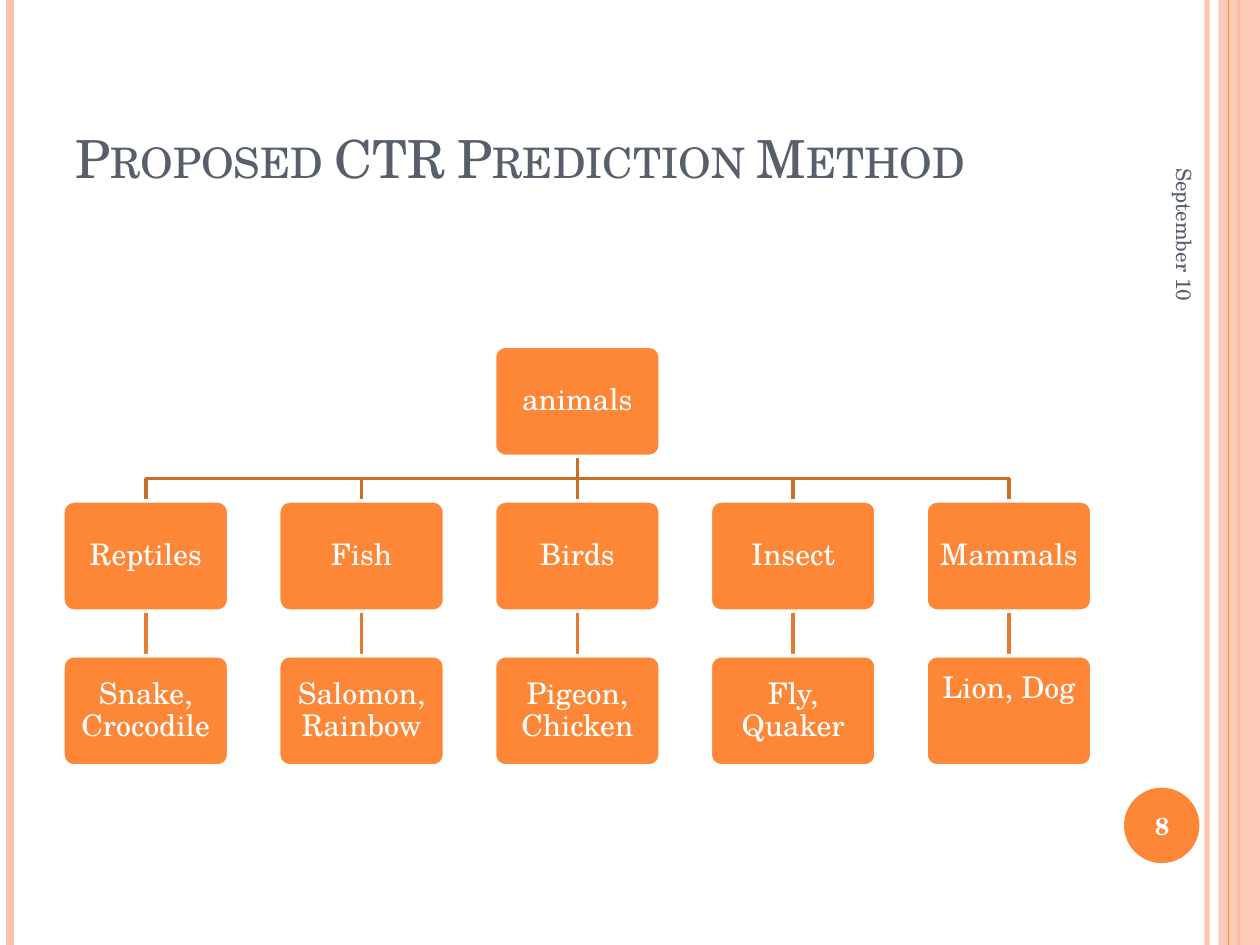
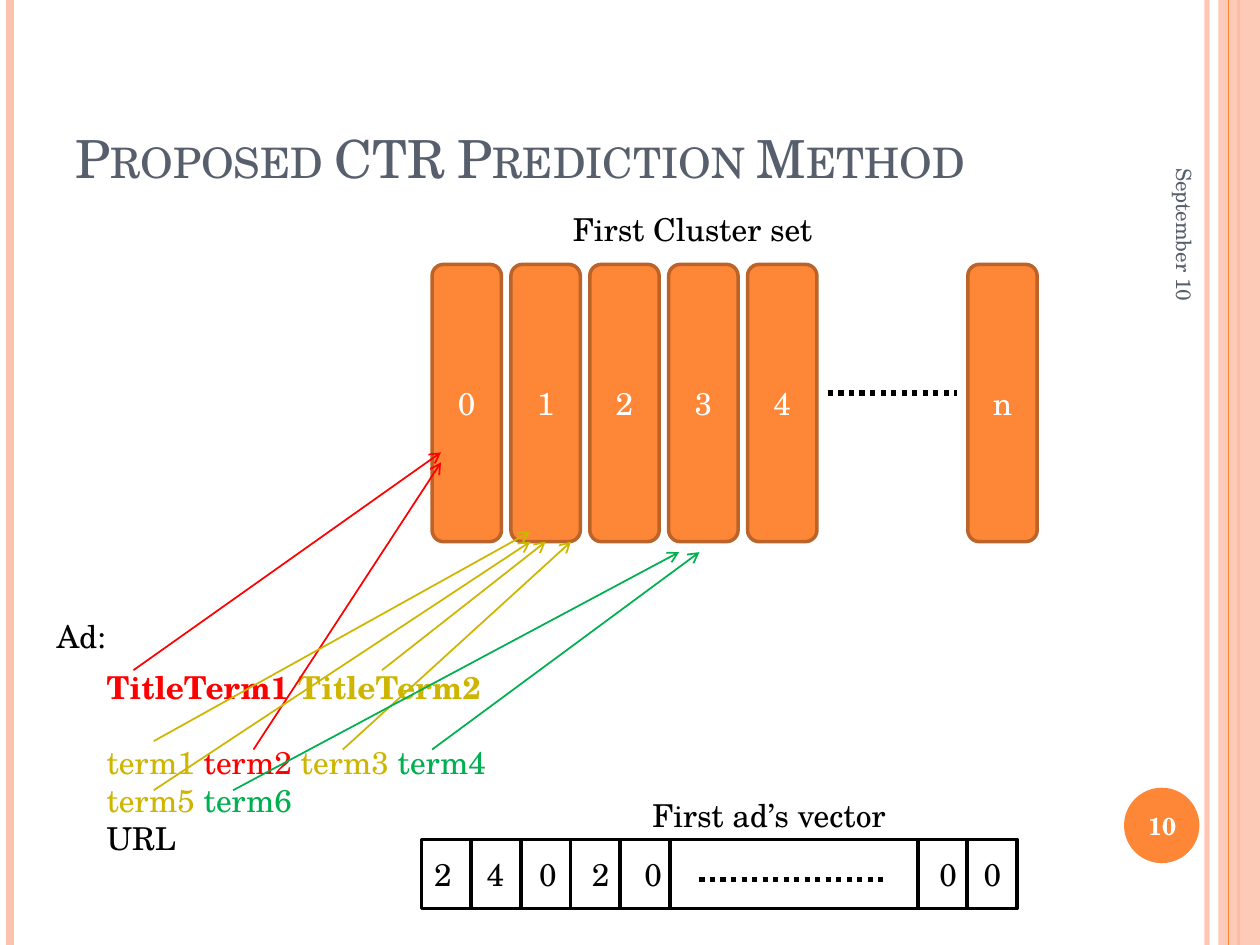
from dataclasses import dataclass

from lxml import etree
from pptx import Presentation
from pptx import util as u
from pptx.dml import color
from pptx.enum import shapes, text
from pptx.oxml import ns

Cm, Pt = u.Cm, u.Pt
Kind, Align, Anchor = shapes.MSO_SHAPE, text.PP_ALIGN, text.MSO_ANCHOR


@dataclass(frozen=True)
class Theme:
    font: str = "TeX Gyre Schola"
    orange: str = "FE8637"
    edge: str = "BC6329"
    branch: str = "CB6B2C"
    twig: str = "E77A32"
    peach: str = "FEC3AE"
    slate: str = "575F6D"
    white: str = "FFFFFF"
    black: str = "000000"
    red: str = "FF0000"
    gold: str = "CEB500"
    green: str = "00B050"
    title: int = 30
    body: int = 18
    node: int = 17
    page: int = 14
    date: int = 12


T = Theme()
WIDE, HIGH = 25.4, 19.05


def rgb(code):
    return color.RGBColor.from_string(code)


def fade(shape, pct):
    """Make the shape's own colour partly transparent."""
    tint = next(shape.element.spPr.iter(ns.qn("a:srgbClr")))
    etree.SubElement(tint, ns.qn("a:alpha"), val=str(pct * 1000))


def rule(slide, start, end, tint, width, dash=None, tail=None):
    """Draw a straight line, dotted or with an arrowhead if asked."""
    line = slide.shapes.add_connector(
        shapes.MSO_CONNECTOR.STRAIGHT, *map(Cm, (*start, *end)))
    line.line.color.rgb = rgb(tint)
    line.line.width = Pt(width)
    props = line.element.spPr
    stroke = props.find(ns.qn("a:ln"))
    if dash:
        etree.SubElement(stroke, ns.qn("a:prstDash"), val=dash)
    if tail:
        etree.SubElement(stroke, ns.qn("a:tailEnd"), type=tail)
    etree.SubElement(props, ns.qn("a:effectLst"))
    return line


def block(slide, kind, box, fill=None, edge=None, width=2):
    shape = slide.shapes.add_shape(kind, *map(Cm, box))
    shape.shadow.inherit = False
    if fill:
        shape.fill.solid()
        shape.fill.fore_color.rgb = rgb(fill)
    else:
        shape.fill.background()
    if edge:
        shape.line.color.rgb = rgb(edge)
        shape.line.width = Pt(width)
    else:
        shape.line.fill.background()
    return shape


def add_run(para, words, size, tint, bold=False):
    run = para.add_run()
    run.text = words
    font = run.font
    font.name, font.size, font.bold = T.font, Pt(size), bold
    font.color.rgb = rgb(tint)
    return run


def write(shape, words, size, tint, align=Align.LEFT, anchor=Anchor.TOP,
          bold=False):
    """Put one run of text in a shape and return its paragraph."""
    frame = shape.text_frame
    frame.word_wrap = True
    frame.vertical_anchor = anchor
    para = frame.paragraphs[0]
    para.alignment = align
    add_run(para, words, size, tint, bold)
    return para


def label(slide, box, words, size=T.body, tint=T.black, **style):
    shape = slide.shapes.add_textbox(*map(Cm, box))
    write(shape, words, size, tint, **style)
    return shape


def frame(deck, title, page):
    """Add a slide with the bands, title, date and page number."""
    slide = deck.slides.add_slide(deck.slide_layouts[6])

    def band(x, tint, width):
        return rule(slide, (x, 0), (x, HIGH), tint, width)

    fade(band(24.33, T.peach, 3), 93)
    band(0.21, T.peach, 4.5)
    band(24.97, T.orange, 1.5)
    fade(block(slide, Kind.RECTANGLE, (24.56, 0, 0.84, HIGH), T.peach), 87)
    band(24.76, T.orange, 0.75)
    block(slide, Kind.OVAL, (22.66, 15.88, 1.52, 1.52), T.orange)

    head = label(slide, (1.27, 0.76, 20.75, 3.18), title, T.title, T.slate,
                 anchor=Anchor.BOTTOM)
    run = head.text_frame.paragraphs[0].runs[0]
    run.font.element.set("cap", "small") if hasattr(
        run.font, "element") else run._r.get_or_add_rPr().set("cap", "small")
    date = label(slide, (21.08, 3, 5.59, 1.07), "September 10", T.date,
                 T.slate, align=Align.RIGHT, anchor=Anchor.MIDDLE)
    date.rotation = 90
    label(slide, (22.58, 15.93, 1.7, 1.45), page, T.page, T.white,
          align=Align.CENTER, anchor=Anchor.MIDDLE, bold=True)
    return slide


def elbow(slide, points):
    """Draw an open bent line through the points."""
    first, *rest = [tuple(map(Cm, spot)) for spot in points]
    form = slide.shapes.build_freeform(*first)
    form.add_line_segments(rest, close=False)
    shape = form.convert_to_shape()
    shape.shadow.inherit = False
    shape.fill.background()
    shape.line.color.rgb = rgb(T.branch)
    shape.line.width = Pt(2)


def node(slide, x, y, size, words, lift=0):
    """Draw a tree node; lift raises its text by half that length."""
    shape = block(slide, Kind.ROUNDED_RECTANGLE, (x, y, *size),
                  T.orange, T.white)
    shape.adjustments[0] = 0.1
    para = write(shape, words, T.node, T.white, Align.CENTER, Anchor.MIDDLE)
    para.line_spacing = 0.9
    inner = shape.text_frame
    inner.margin_left = inner.margin_right = inner.margin_top = Cm(0.18)
    inner.margin_bottom = Cm(0.18 + lift)


def draw_tree(slide, root, kinds):
    left, step = 1.27, 4.35
    top, drop = 6.98, 3.12
    size = wide, high = 3.34, 2.22
    rows = [top + drop * i for i in range(3)]
    mid = left + step * (len(kinds) // 2)
    hub = mid + wide / 2
    foot = rows[0] + high
    bend = (foot + rows[1]) / 2

    for i, (group, beasts, lift) in enumerate(kinds):
        x = left + step * i
        axis = x + wide / 2
        if x == mid:
            rule(slide, (hub, foot), (hub, rows[1]), T.branch, 2)
        else:
            elbow(slide, [(hub, foot), (hub, bend), (axis, bend),
                          (axis, rows[1])])
        rule(slide, (axis, rows[1] + high), (axis, rows[2]), T.twig, 2)
        node(slide, x, rows[1], size, group)
        node(slide, x, rows[2], size, beasts, lift)
    node(slide, mid, rows[0], size, root)


def draw_sets(slide):
    left, step = 8.71, 1.59
    spots = [(left + step * i, str(i)) for i in range(5)] + [(19.51, "n")]
    for x, name in spots:
        bar = block(slide, Kind.ROUNDED_RECTANGLE, (x, 5.33, 1.4, 5.59),
                    T.orange, T.edge)
        write(bar, name, T.body, T.white, Align.CENTER, Anchor.MIDDLE)
    rule(slide, (16.69, 7.92), (19.3, 7.92), T.black, 3, dash="sysDot")
    label(slide, (11.3, 4.11, 6.81, 1.02), "First Cluster set")


def draw_ad(slide):
    label(slide, (0.89, 12.32, 6.81, 1.02), "Ad:")
    box = label(slide, (1.9, 13.34, 8.2, 4.11), "TitleTerm1 ", tint=T.red,
                bold=True)
    inner = box.text_frame
    add_run(inner.paragraphs[0], "TitleTerm2", T.body, T.gold, True)
    terms = inner.add_paragraph()
    terms.space_before = Pt(21.6)
    for words, tint in (("term1 ", T.gold), ("term2 ", T.red),
                        ("term3 ", T.gold), ("term4 ", T.green),
                        ("term5 ", T.gold), ("term6", T.green)):
        add_run(terms, words, T.body, tint)
    add_run(inner.add_paragraph(), "URL", T.body, T.black)


def draw_links(slide):
    links = {
        T.red: [((2.69, 13.51), (8.89, 9.12)),
                ((5.11, 15.11), (8.89, 9.32))],
        T.gold: [((3.1, 14.94), (10.69, 10.72)),
                 ((7.7, 13.51), (11, 10.92)),
                 ((6.91, 15.11), (11.51, 10.92)),
                 ((3.1, 15.93), (10.69, 10.92))],
        T.green: [((4.7, 15.93), (13.69, 11.13)),
                  ((8.71, 15.11), (14.1, 11.13))],
    }
    for tint, pairs in links.items():
        for start, end in pairs:
            rule(slide, start, end, tint, 1, tail="arrow")


def draw_vector(slide):
    left, top, cell, high = 8.5, 16.92, 1, 1.4
    wide = 12 * cell
    block(slide, Kind.RECTANGLE, (left, top, wide, high), edge=T.black)
    for i in (1, 2, 3, 4, 5, 10, 11):
        x = left + cell * i
        rule(slide, (x, top), (x, top + high), T.black, 2.25)
    rule(slide, (14.1, 17.73), (17.9, 17.73), T.black, 3, dash="sysDot")

    box = label(slide, (left, 17.12, wide, 1.02),
                "\t".join("2402000"))
    props = box.text_frame.paragraphs[0]._p.get_or_add_pPr()
    stops = etree.SubElement(props, ns.qn("a:tabLst"))
    for stop in (1.06, 2.12, 3.18, 4.24, 10.19, 11.08):
        etree.SubElement(stops, ns.qn("a:tab"), pos=str(Cm(stop)), algn="l")
    label(slide, (12.9, 15.93, 6.81, 1.02), "First ad’s vector")


def main():
    deck = Presentation()
    deck.slide_width, deck.slide_height = Cm(WIDE), Cm(HIGH)
    title = "Proposed CTR Prediction Method"

    draw_tree(frame(deck, title, "8"), "animals", [
        ("Reptiles", "Snake, Crocodile", 0),
        ("Fish", "Salomon, Rainbow", 0),
        ("Birds", "Pigeon, Chicken", 0),
        ("Insect", "Fly, Quaker", 0),
        ("Mammals", "Lion, Dog", 0.87),
    ])

    slide = frame(deck, title, "10")
    for draw in (draw_sets, draw_ad, draw_links, draw_vector):
        draw(slide)
    deck.save("out.pptx")


if __name__ == "__main__":
    main()
